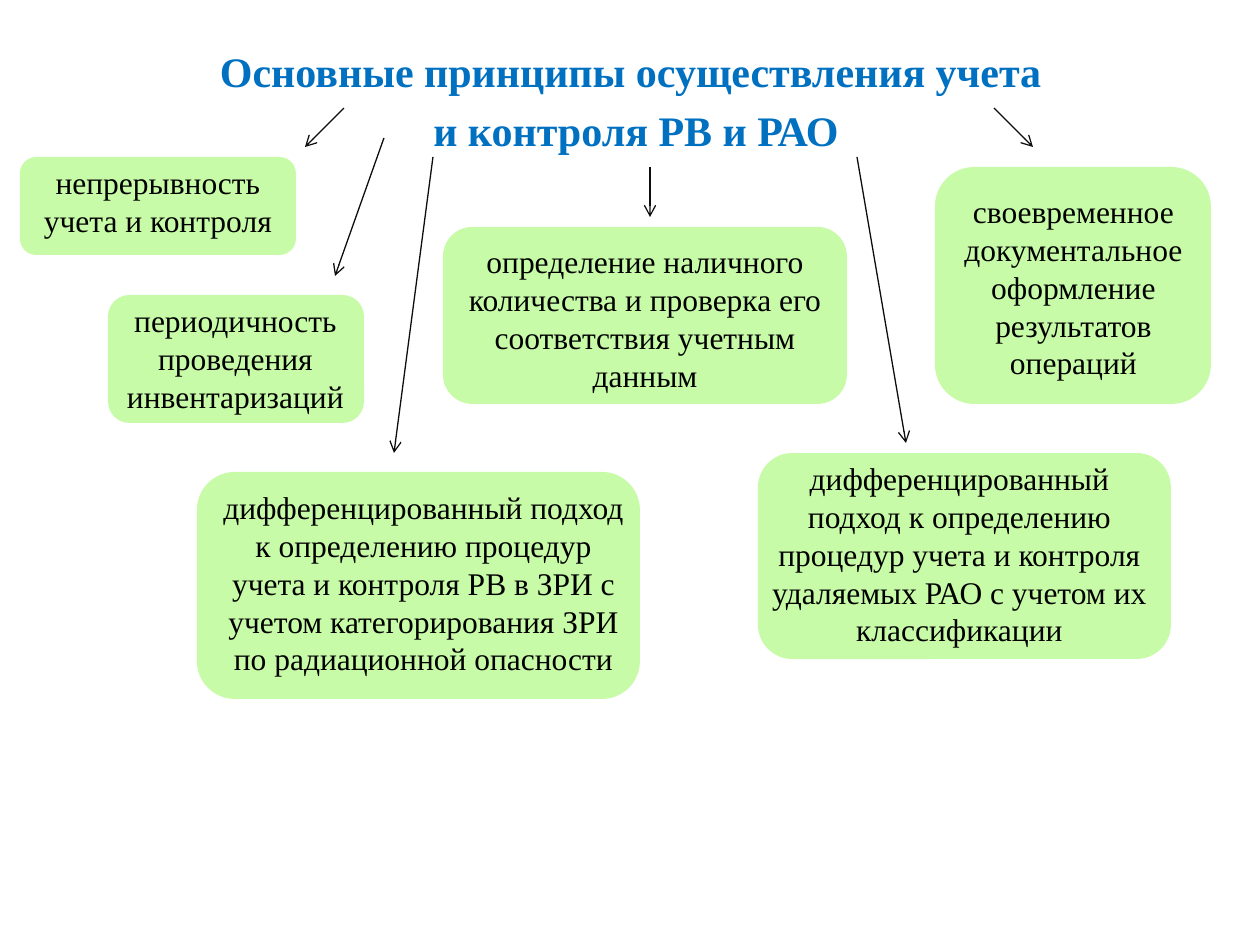
from pptx import Presentation
from pptx.dml.color import RGBColor
from pptx.enum.shapes import MSO_CONNECTOR as CONN, MSO_SHAPE as SHAPE
from pptx.enum.text import MSO_ANCHOR as ANCHOR, PP_ALIGN as ALIGN
from pptx.oxml.ns import qn
from pptx.util import Pt
from lxml.etree import SubElement

EMU_PER_PX = 914400 / 126

HEADING = ["Основные принципы осуществления учета ", "и контроля РВ и РАО"]
PRINCIPLES = [
    ((758, 453, 413, 206), (758, 453, 403, 204),
     "дифференцированный подход к определению процедур учета и контроля "
     "удаляемых РАО с учетом их классификации"),
    ((197, 472, 443, 227), (207, 482, 433, 204),
     "дифференцированный подход к определению процедур учета и контроля "
     "РВ в ЗРИ с учетом категорирования ЗРИ по радиационной опасности"),
    ((443, 227, 404, 177), (453, 236, 384, 165),
     "определение наличного количества и проверка его соответствия "
     "учетным данным"),
    ((935, 167, 276, 237), (916, 186, 315, 204),
     "своевременное документальное оформление результатов операций"),
    ((108, 295, 256, 128), (78, 295, 315, 127),
     "периодичность проведения инвентаризаций"),
    ((20, 157, 276, 98), (20, 157, 276, 89),
     "непрерывность учета и контроля"),
]
ARROWS = [
    (344, 108, 305, 147), (384, 138, 335, 276), (433, 157, 394, 453),
    (650, 167, 650, 217), (857, 157, 906, 443), (994, 108, 1033, 147),
]


def px(*values):
    return [round(v * EMU_PER_PX) for v in values]


def rgb(value):
    return RGBColor.from_string(value)


class Deck:
    """Slide style and the slide being drawn."""

    font = "Times New Roman"
    heading, text, card_fill, line = "0070C0", "000000", "C7FBA7", "0D0D0D"

    def __init__(self):
        self.prs = Presentation()
        self.prs.slide_width, self.prs.slide_height = px(1260, 945)
        self.s = self.prs.slides.add_slide(self.prs.slide_layouts[1])
        title = self.s.shapes.title
        title.element.getparent().remove(title.element)

    def paragraph(self, p, text, size, color, bold=False):
        p.alignment = ALIGN.CENTER
        p.space_before = Pt(size * 0.2)
        r = p.add_run()
        r.text = text
        r.font.name, r.font.size, r.font.bold = self.font, Pt(size), bold
        r.font.color.rgb = rgb(color)

    def body(self, box, lines):
        sp = self.s.placeholders[1]
        sp.left, sp.top, sp.width, sp.height = px(*box)
        tf = sp.text_frame
        tf.vertical_anchor = ANCHOR.TOP
        for i, text in enumerate(lines):
            p = tf.add_paragraph() if i else tf.paragraphs[0]
            self.paragraph(p, text, 24, self.heading, True)
            pPr = p._p.get_or_add_pPr()
            pPr.set("marL", "0")
            pPr.set("indent", "0")
            SubElement(pPr, qn("a:buNone"))

    def card(self, box):
        sp = self.s.shapes.add_shape(SHAPE.ROUNDED_RECTANGLE, *px(*box))
        sp.shadow.inherit = False
        sp.fill.solid()
        sp.fill.fore_color.rgb = rgb(self.card_fill)
        sp.line.fill.background()

    def label(self, box, text):
        tf = self.s.shapes.add_textbox(*px(*box)).text_frame
        tf.word_wrap = True
        self.paragraph(tf.paragraphs[0], text, 18, self.text)

    def arrow(self, ends):
        sp = self.s.shapes.add_connector(CONN.STRAIGHT, *px(*ends))
        sp.line.width = Pt(0.75)
        sp.line.color.rgb = rgb(self.line)
        SubElement(sp.line._get_or_add_ln(), qn("a:tailEnd"), type="arrow")
        SubElement(sp._element.spPr, qn("a:effectLst"))


def main():
    deck = Deck()
    deck.body((69, 39, 1134, 186), HEADING)
    for box, _, _ in PRINCIPLES:
        deck.card(box)
    for _, box, text in PRINCIPLES:
        deck.label(box, text)
    for ends in ARROWS:
        deck.arrow(ends)
    deck.prs.save("out.pptx")


if __name__ == "__main__":
    main()
